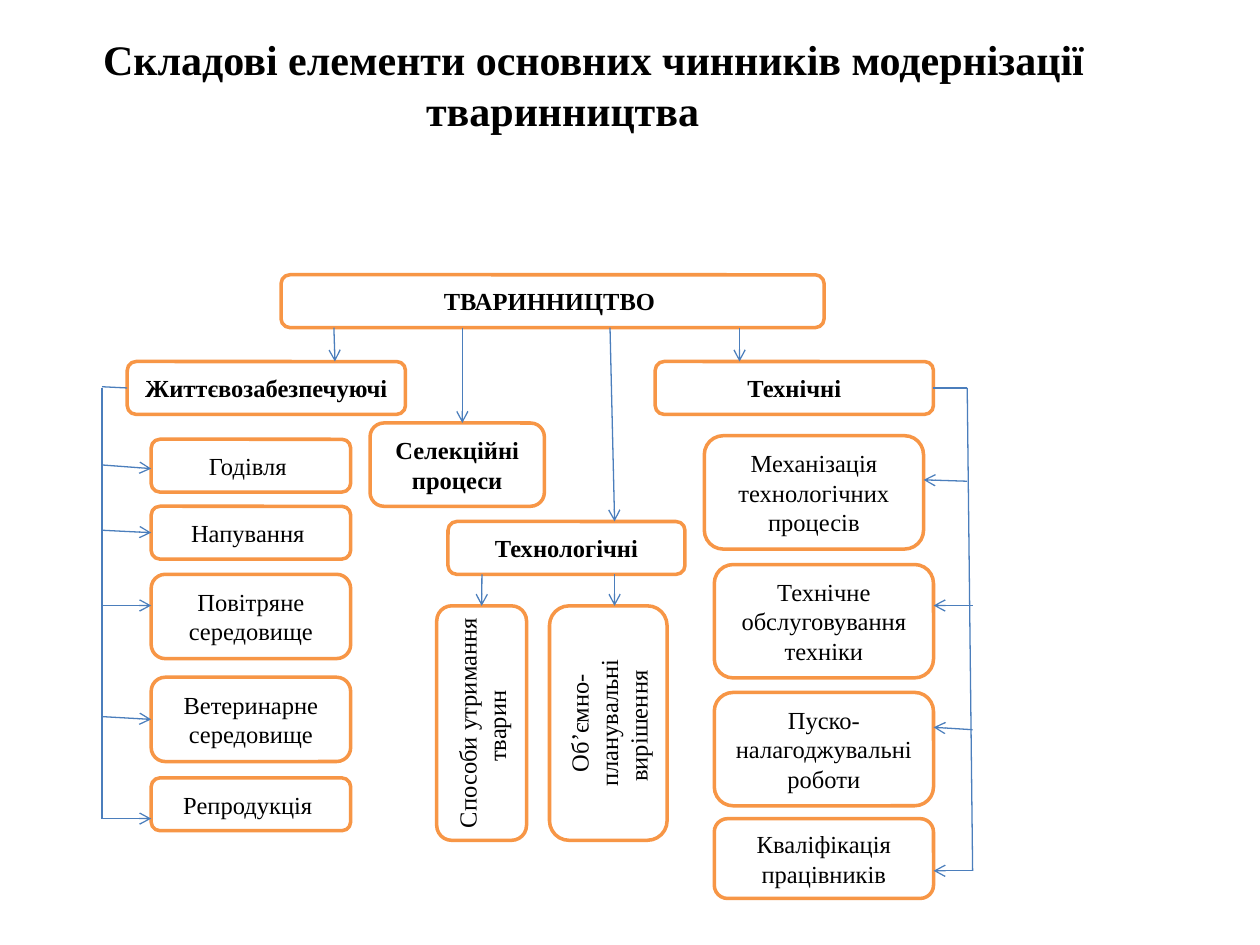
import dataclasses

import pptx
import pptx.dml.color
import pptx.enum.shapes
import pptx.enum.text
import pptx.oxml.ns
import pptx.util
from lxml import etree

TOP, LEFT, RIGHT = 0, 1, 3


@dataclasses.dataclass(frozen=True)
class Theme:
    """Colours, font and sizes of the diagram."""

    font: str = "Times New Roman"
    ink: str = "000000"
    paper: str = "FFFFFF"
    border: str = "F79646"
    connector: str = "4B7EBC"
    title_size: float = 24
    box_size: float = 14
    border_width: float = 2
    connector_width: float = 0.75


class DiagramSlide:
    """Holds the theme and the slide, and draws each kind of element."""

    def __init__(self, slide, theme):
        self.slide = slide
        self.theme = theme

    def color(self, value):
        return pptx.dml.color.RGBColor.from_string(value)

    def set_label(self, shape, text, size, bold):
        frame = shape.text_frame
        frame.word_wrap = True
        frame.vertical_anchor = pptx.enum.text.MSO_ANCHOR.MIDDLE
        frame.text = text
        paragraph = frame.paragraphs[0]
        paragraph.alignment = pptx.enum.text.PP_ALIGN.CENTER
        font = paragraph.runs[0].font
        font.name = self.theme.font
        font.size = pptx.util.Pt(size)
        font.bold = bold
        font.color.rgb = self.color(self.theme.ink)
        return paragraph

    def title(self, text, left, top, width, height, indent):
        shape = self.slide.shapes.add_textbox(
            *map(pptx.util.Pt, (left, top, width, height)))
        paragraph = self.set_label(shape, text, self.theme.title_size, True)
        properties = paragraph._p.get_or_add_pPr()
        properties.set("indent", str(int(pptx.util.Pt(indent))))

    def box(self, text, left, top, width, height, bold=False):
        shape = self.slide.shapes.add_shape(
            pptx.enum.shapes.MSO_SHAPE.ROUNDED_RECTANGLE,
            *map(pptx.util.Pt, (left, top, width, height)))
        shape.shadow.inherit = False
        shape.fill.solid()
        shape.fill.fore_color.rgb = self.color(self.theme.paper)
        shape.line.color.rgb = self.color(self.theme.border)
        shape.line.width = pptx.util.Pt(self.theme.border_width)
        self.set_label(shape, text, self.theme.box_size, bold)
        return shape

    def upright_box(self, text, left, top, width, height):
        shape = self.box(text, left, top, width, height)
        frame = shape.text_frame
        frame._txBody.bodyPr.set("vert", "vert270")
        margin = pptx.util.Pt(3)
        frame.margin_left = frame.margin_right = margin
        frame.margin_top = frame.margin_bottom = margin
        return shape

    def line(self, start, end, arrow=False, begin=None, finish=None):
        connector = self.slide.shapes.add_connector(
            pptx.enum.shapes.MSO_CONNECTOR.STRAIGHT,
            *map(pptx.util.Pt, (*start, *end)))
        if begin:
            connector.begin_connect(*begin)
        if finish:
            connector.end_connect(*finish)
        connector.line.color.rgb = self.color(self.theme.connector)
        connector.line.width = pptx.util.Pt(self.theme.connector_width)
        if arrow:
            tail = etree.SubElement(connector.line._get_or_add_ln(),
                                    pptx.oxml.ns.qn("a:tailEnd"))
            tail.set("type", "arrow")
        etree.SubElement(connector._element.spPr, pptx.oxml.ns.qn("a:effectLst"))


def main():
    presentation = pptx.Presentation()
    presentation.slide_width = pptx.util.Pt(720)
    presentation.slide_height = pptx.util.Pt(540)
    slide = presentation.slides.add_slide(presentation.slide_layouts[6])
    diagram = DiagramSlide(slide, Theme())

    row = 30.2
    diagram.box("ТВАРИННИЦТВО ", 160.6, 157, 310.3, row, bold=True)
    life = diagram.box("Життєвозабезпечуючі ", 72.7, 206.6, 159, row, bold=True)
    technical = diagram.box("Технічні", 374.4, 206.6, 159, row, bold=True)
    diagram.box("Селекційні процеси", 211.5, 241.7, 99.6, 47.6, bold=True)
    diagram.box("Технологічні", 256, 298, 135.4, row, bold=True)

    life_items = [
        ("Годівля ", 251, row, 265.7, 267.8, False),
        ("Напування ", 289.3, row, 303, 304.4, True),
        ("Повітряне середовище", 328.2, 48.2, 346, 346, False),
        ("Ветеринарне середовище", 387, 48.2, 409.5, 411, True),
        ("Репродукція ", 444.5, row, 467.8, 467.8, False),
    ]
    life_trunk, life_left = 58.3, 86.4
    for text, top, height, start, end, joined in life_items:
        item = diagram.box(text, life_left, top, 114, height)
        diagram.line((life_trunk, start), (life_left, end), arrow=True,
                     finish=(item, LEFT) if joined else None)

    technical_items = [
        ("Механізація технологічних процесів", 402.5, 249, 64.8, 552.7, 275, 274.2),
        ("Технічне обслуговування техніки", 408.2, 322.6, 64.8, 555.8, 346, 346),
        ("Пуско-налагоджувальні роботи", 408.2, 395.7, 64.8, 555.8, 417, 415.6),
        ("Кваліфікація працівників", 408.2, 467.8, 45.6, 555.8, 497.6, 497.6),
    ]
    item_width = 125.3
    for text, left, top, height, trunk, start, end in technical_items:
        diagram.box(text, left, top, item_width, height)
        diagram.line((trunk, start), (left + item_width, end), arrow=True)

    housing = diagram.upright_box("Способи утримання тварин ", 249.6, 346.2, 51.3, 134)
    diagram.upright_box("Об’ємно-планувальні вирішення ", 314, 346.2, 67.2, 134)

    root_bottom, technology_bottom = 187.2, 328.2
    for start_x, end_x, end_y in [(190.8, 191.4, 206.6), (264.2, 264.2, 241.7),
                                  (348.6, 351.2, 298), (422.6, 422.6, 206.6)]:
        diagram.line((start_x, root_bottom), (end_x, end_y), arrow=True)
    diagram.line((275.4, technology_bottom), (275.3, 346.2), arrow=True,
                 finish=(housing, TOP))
    diagram.line((351.2, technology_bottom), (351.2, 346.2), arrow=True)

    diagram.line((72.7, 221.7), (life_trunk, 221), begin=(life, LEFT))
    diagram.line((life_trunk, 221.7), (life_trunk, 467.8))
    diagram.line((533.4, 221.7), (552.7, 221.7), begin=(technical, RIGHT))
    diagram.line((552.7, 221.7), (555.8, 497.6))

    diagram.title("Складові елементи основних чинників модернізації тваринництва",
                  5, 0, 633, 96.5, indent=35.4)
    presentation.save("out.pptx")


if __name__ == "__main__":
    main()
